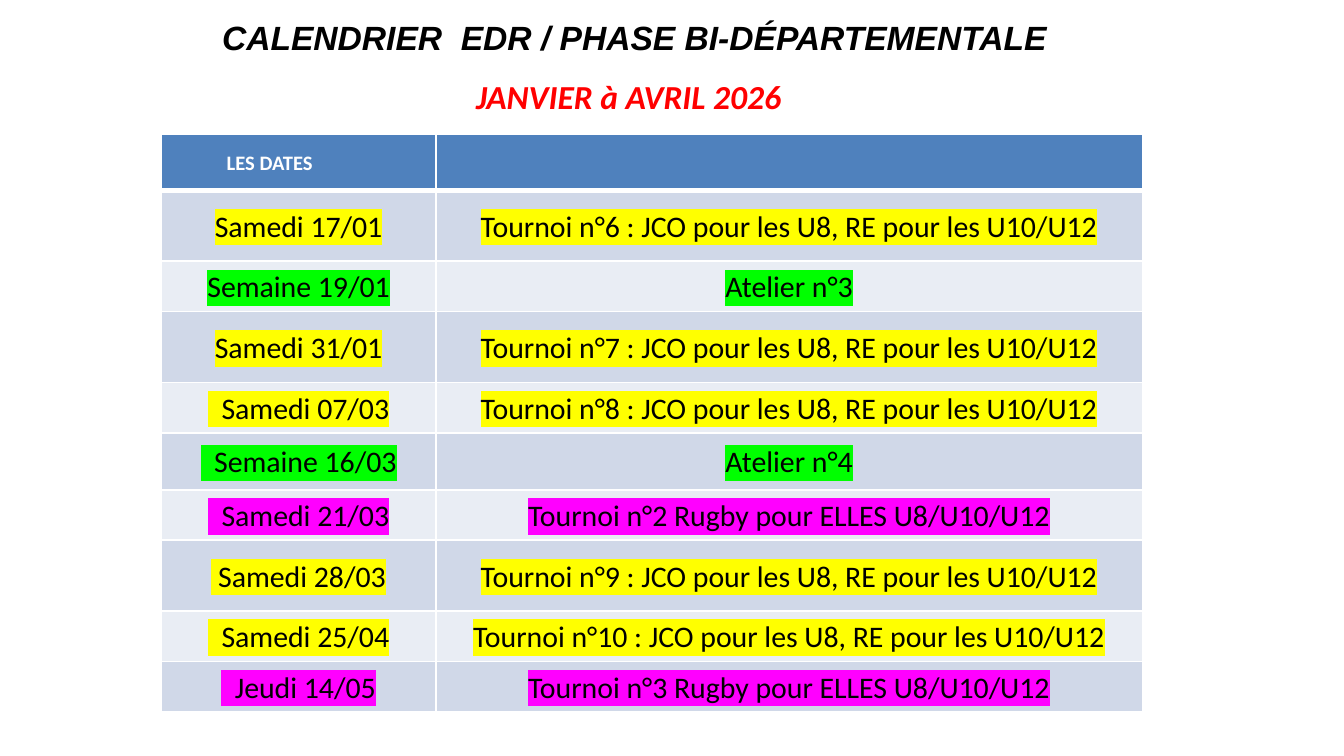
from dataclasses import dataclass

from lxml import etree
from pptx import Presentation
from pptx.dml.color import RGBColor
from pptx.enum import text as t
from pptx.oxml import ns
from pptx.util import Pt

YELLOW, GREEN, PINK = "FFFF00", "00FF00", "FF00FF"
BLACK, WHITE, RED = "000000", "FFFFFF", "FF0000"
HEADER, BANDS = "4F81BD", ("D0D8E8", "E9EDF4")


@dataclass
class Event:
    date: str
    label: str
    mark: str
    height: float = 27


def tournament(number: int) -> str:
    return f"Tournoi n°{number}\u00a0: JCO pour les U8, RE pour les U10/U12"


def girls(number: int) -> str:
    return f"Tournoi n°{number}\u00a0Rugby pour ELLES U8/U10/U12"


EVENTS = [
    Event("Samedi 17/01", tournament(6), YELLOW, 38),
    Event("Semaine 19/01", "Atelier n°3", GREEN),
    Event("Samedi 31/01", tournament(7), YELLOW, 38),
    Event("  Samedi 07/03", tournament(8), YELLOW),
    Event("  Semaine 16/03", "Atelier n°4", GREEN, 30.5),
    Event("  Samedi 21/03", girls(2), PINK),
    Event(" Samedi 28/03", tournament(9), YELLOW, 38),
    Event("  Samedi 25/04", tournament(10), YELLOW),
    Event("  Jeudi 14/05", girls(3), PINK),
]


def color(value: str) -> RGBColor:
    return RGBColor.from_string(value)


def assign(target, values: dict) -> None:
    for name, value in values.items():
        setattr(target, name, value)


def add_run(para, words: str, size: float, ink: str, **style):
    span = para.add_run()
    span.text = words
    assign(span.font, {"name": "Calibri", "size": Pt(size), **style})
    span.font.color.rgb = color(ink)
    return span


def highlight(span, ink: str) -> None:
    mark = etree.Element(ns.qn("a:highlight"))
    etree.SubElement(mark, ns.qn("a:srgbClr"), val=ink)
    span.font._element.find(ns.qn("a:solidFill")).addnext(mark)


def add_borders(cell, bottom: float, top: float = 1) -> None:
    properties = cell._tc.get_or_add_tcPr()
    for side, width in {"L": 1, "R": 1, "T": top, "B": bottom}.items():
        line = etree.SubElement(properties, ns.qn(f"a:ln{side}"), w=str(Pt(width)))
        fill = etree.SubElement(line, ns.qn("a:solidFill"))
        etree.SubElement(fill, ns.qn("a:srgbClr"), val=WHITE)


def format_cell(cell, fill: str, bottom: float = 1, top: float = 1):
    add_borders(cell, bottom, top)
    cell.fill.solid()
    cell.fill.fore_color.rgb = color(fill)
    assign(cell, {"margin_left": Pt(5), "margin_right": Pt(5),
                  "margin_top": 0, "margin_bottom": 0,
                  "vertical_anchor": t.MSO_ANCHOR.MIDDLE})
    para = cell.text_frame.paragraphs[0]
    assign(para, {"alignment": t.PP_ALIGN.CENTER, "line_spacing": 1.07,
                  "space_after": Pt(8)})
    return para


deck = Presentation()
assign(deck, {"slide_width": Pt(720), "slide_height": Pt(405)})
page = deck.slides.add_slide(deck.slide_layouts[5])

# Title
title = page.shapes.title
assign(title, {"left": Pt(103), "top": Pt(8.5), "width": Pt(474), "height": Pt(57)})
assign(title.text_frame, {"margin_left": 0, "margin_top": Pt(0.7),
                          "margin_right": 0, "margin_bottom": 0,
                          "word_wrap": True, "vertical_anchor": t.MSO_ANCHOR.TOP,
                          "auto_size": t.MSO_AUTO_SIZE.SHAPE_TO_FIT_TEXT})
heading = title.text_frame.paragraphs[0]
heading.alignment = t.PP_ALIGN.CENTER
add_run(heading, "CALENDRIER  EDR / PHASE BI-DÉPARTEMENTALE", 18, BLACK,
        name="Arial", bold=True, italic=True)
heading.add_line_break()
add_run(heading, "JANVIER à AVRIL 2026", 18, RED, bold=True, italic=True)
add_run(heading, " ", 28, BLACK, bold=True)

# Calendar table
heights = [30] + [event.height for event in EVENTS]
table = page.shapes.add_table(len(heights), 2, Pt(86.5), Pt(72),
                              Pt(525.5), Pt(sum(heights))).table
for column, width in zip(table.columns, (147, 378.5)):
    column.width = Pt(width)
for row, height in zip(table.rows, heights):
    row.height = Pt(height)

# Header row, with its label set left of the column centre
dates_head, events_head = table.rows[0].cells
add_run(format_cell(dates_head, HEADER, bottom=3), "LES DATES", 11, WHITE, bold=True)
dates_head.margin_right = Pt(36)
format_cell(events_head, HEADER, bottom=3)

# Event rows
for index, event in enumerate(EVENTS):
    for cell, words in zip(table.rows[index + 1].cells, (event.date, event.label)):
        para = format_cell(cell, BANDS[index % 2], top=1 if index else 3)
        highlight(add_run(para, words, 16, BLACK, bold=False), event.mark)

deck.save("out.pptx")
